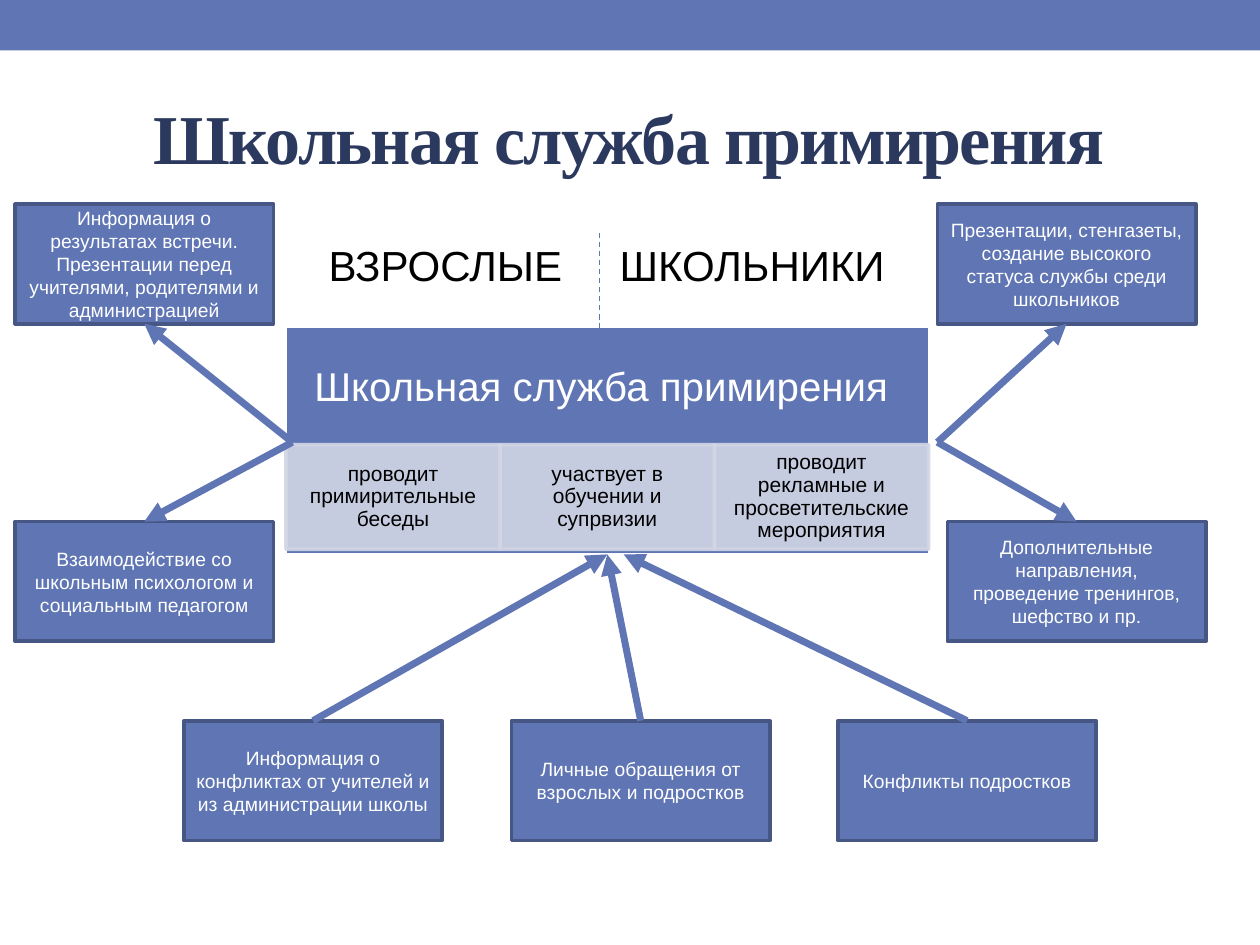
from lxml import etree
from pptx import Presentation
from pptx.dml.color import RGBColor
from pptx.enum.dml import MSO_LINE
from pptx.enum.shapes import MSO_CONNECTOR, MSO_SHAPE
from pptx.enum.text import MSO_ANCHOR, PP_ALIGN
from pptx.oxml.ns import qn
from pptx.util import Inches, Pt

RECT = MSO_SHAPE.RECTANGLE
STRAIGHT = MSO_CONNECTOR.STRAIGHT
MIDDLE = MSO_ANCHOR.MIDDLE
LEFT, CENTER = PP_ALIGN.LEFT, PP_ALIGN.CENTER
DASH = MSO_LINE.DASH
TOP_SIDE, BOTTOM_SIDE = 0, 2

BLUE, DARK_BLUE, NAVY, PALE = "6076B4", "475785", "2C395E", "D2D6E5"
WHITE, BLACK = "FFFFFF", "000000"
BORDER = 2.08

# Content
TITLE = "Школьная служба примирения"
AUDIENCES = [("ВЗРОСЛЫЕ", 2.51), ("ШКОЛЬНИКИ", 4.82)]
ACTIVITIES = [
    "проводит примирительные беседы",
    "участвует в обучении и супрвизии",
    "проводит рекламные и просветительские мероприятия",
]
HUB = (2.26, 2.59, 5.12, 1.81)
LEFT_START, RIGHT_START = (2.32, 3.51), (7.44, 3.51)
UPPER, LOWER, SOURCE_ROW = 1.62, 4.14, 5.72
# text, left, top, arrow start, side of the box that the arrow reaches
OUTCOMES = [
    ("Информация о результатах встречи. Презентации перед учителями, "
     "родителями и администрацией", 0.12, UPPER, LEFT_START, BOTTOM_SIDE),
    ("Взаимодействие со школьным психологом и социальным педагогом",
     0.12, LOWER, LEFT_START, TOP_SIDE),
    ("Презентации, стенгазеты, создание высокого статуса службы среди школьников",
     7.44, UPPER, RIGHT_START, BOTTOM_SIDE),
    ("Дополнительные направления, проведение тренингов, шефство и пр.",
     7.52, LOWER, RIGHT_START, TOP_SIDE),
]
# text, left, arrow end
SOURCES = [
    ("Информация о конфликтах от учителей и из администрации школы", 1.46, (4.82, 4.4)),
    ("Личные обращения от взрослых и подростков", 4.06, (4.82, 4.4)),
    ("Конфликты подростков", 6.65, (4.95, 4.4)),
]
BOX_W, BOX_H = 2.05, 0.95


def rgb(value):
    return RGBColor.from_string(value)


def write(shape, text, size=11, color=WHITE, font="Arial", bold=False, align=CENTER,
          insets=(0.1, 0.05), line_spacing=1.0, tracking=None):
    frame = shape.text_frame
    frame.word_wrap = True
    frame.vertical_anchor = MIDDLE
    frame.margin_left = frame.margin_right = Inches(insets[0])
    frame.margin_top = frame.margin_bottom = Inches(insets[1])
    paragraph = frame.paragraphs[0]
    paragraph.alignment = align
    paragraph.line_spacing = line_spacing
    run = paragraph.add_run()
    run.text = text
    run.font.size, run.font.name, run.font.bold = Pt(size), font, bold
    run.font.color.rgb = rgb(color)
    if tracking is not None:
        run.font._element.set("spc", str(tracking))


def add_rect(box, fill, line=None, opacity=None):
    rect = slide.shapes.add_shape(RECT, *map(Inches, box))
    rect.shadow.inherit = False
    rect.fill.solid()
    rect.fill.fore_color.rgb = rgb(fill)
    if line:
        rect.line.color.rgb = rgb(line)
        rect.line.width = Pt(BORDER)
    else:
        rect.line.fill.background()
    if opacity:
        for color in rect._element.spPr.iter(qn("a:srgbClr")):
            etree.SubElement(color, qn("a:alpha"), val=str(opacity * 1000))
    return rect


def add_text(box, text, **style):
    write(slide.shapes.add_textbox(*map(Inches, box)), text, **style)


def add_line(start, end, width, arrow=False):
    line = slide.shapes.add_connector(STRAIGHT, *map(Inches, start + end))
    line.line.color.rgb = rgb(BLUE)
    line.line.width = Pt(width)
    if arrow:
        etree.SubElement(line.line._get_or_add_ln(), qn("a:tailEnd"), type="triangle")
    etree.SubElement(line._element.spPr, qn("a:effectLst"))
    return line


def add_box(text, left, top):
    box = add_rect((left, top, BOX_W, BOX_H), BLUE, DARK_BLUE)
    write(box, text)
    return box


prs = Presentation()
prs.slide_width, prs.slide_height = Inches(10), Inches(7.5)
slide = prs.slides.add_slide(prs.slide_layouts[6])

# Top band and title
add_rect((0, 0, 10, 0.4), BLUE)
add_text((0.49, 0.54, 9, 1.08), TITLE, size=40, color=NAVY,
         font="Times New Roman", bold=True, tracking=-100)

# Central service panel with its activities
hub = add_rect(HUB, BLUE, WHITE)
add_text((*HUB[:3], 0.98), TITLE + " ", size=23, insets=(0.18, 0.18), line_spacing=0.9)
TILE_W = 1.7
for column, activity in enumerate(ACTIVITIES):
    tile = add_rect((2.27 + column * TILE_W, 3.53, TILE_W, 0.83), PALE, PALE, opacity=90)
    write(tile, activity, size=12, color=BLACK, insets=(0.09, 0.02), line_spacing=0.9)

# Audiences and the divider between them
for audience, left in AUDIENCES:
    add_text((left, 1.85, 2.4, 0.5), audience, size=24, color=BLACK, align=LEFT)
divider = add_line((4.76, 1.85), (4.76, 2.8), 0.75)
divider.line.dash_style = DASH

# Outcomes: arrows run from the panel to the boxes
for text, left, top, start, side in OUTCOMES:
    box = add_box(text, left, top)
    arrow = add_line(start, (left + BOX_W / 2, top), 4, arrow=True)
    arrow.end_connect(box, side)

# Sources: arrows run from the boxes to the panel
hub_bottom = (4.82, 4.4)
for text, left, end in SOURCES:
    box = add_box(text, left, SOURCE_ROW)
    arrow = add_line((left + BOX_W / 2, SOURCE_ROW), end, 4, arrow=True)
    arrow.begin_connect(box, TOP_SIDE)
    if end == hub_bottom:
        arrow.end_connect(hub, BOTTOM_SIDE)

prs.save("out.pptx")
